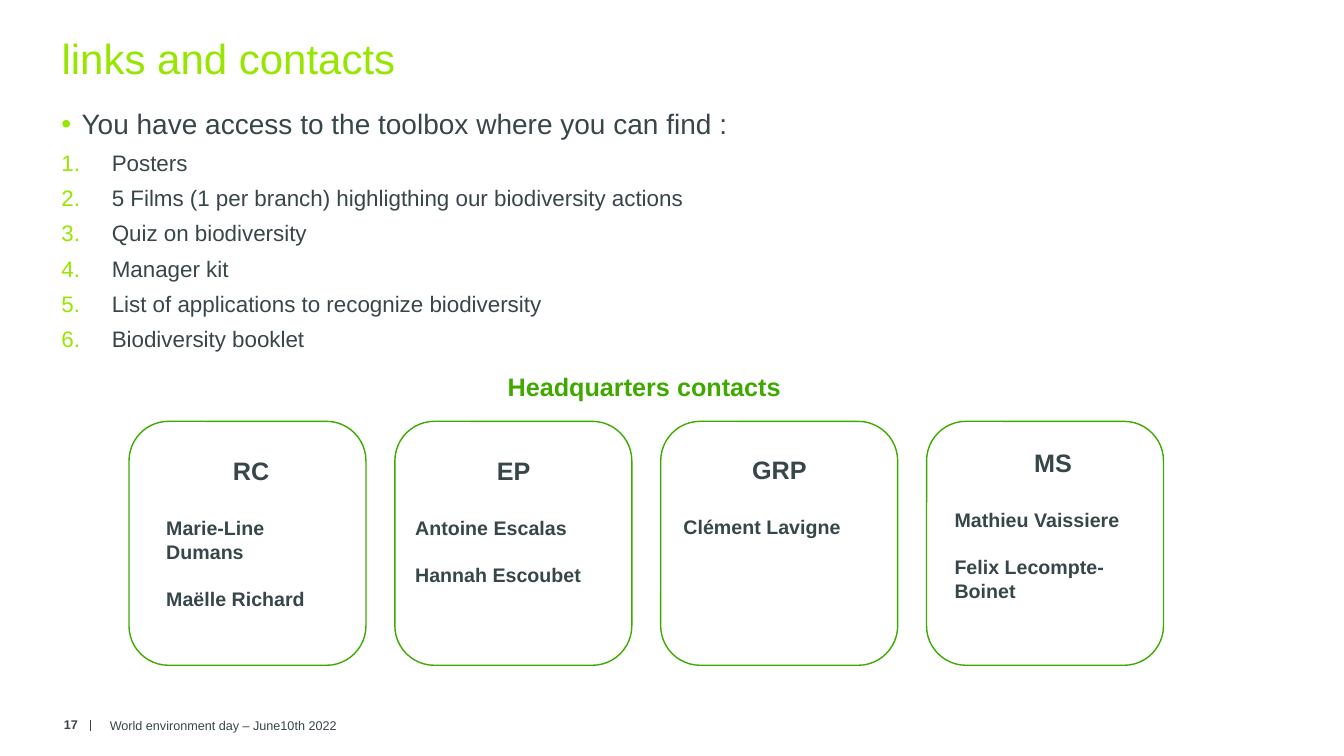
from dataclasses import dataclass

from lxml import etree
from pptx import Presentation
from pptx.dml.color import RGBColor
from pptx.enum.shapes import MSO_CONNECTOR, MSO_SHAPE
from pptx.enum.text import MSO_ANCHOR, MSO_AUTO_SIZE, PP_ALIGN
from pptx.oxml.ns import qn
from pptx.util import Emu, Inches, Pt

LEFT, CENTER, RIGHT = PP_ALIGN.LEFT, PP_ALIGN.CENTER, PP_ALIGN.RIGHT
TOP, MIDDLE = MSO_ANCHOR.TOP, MSO_ANCHOR.MIDDLE
ROUNDED = MSO_SHAPE.ROUNDED_RECTANGLE
STRAIGHT = MSO_CONNECTOR.STRAIGHT
NO_FIT = MSO_AUTO_SIZE.NONE
TITLE_ONLY = 5
SLIDE_W, SLIDE_H = Inches(13.33), Inches(7.5)


@dataclass(frozen=True)
class Theme:
    font: str = "Arial"
    lime: str = "96E600"
    green: str = "40A900"
    slate: str = "374649"
    title: float = 30
    lead: float = 20
    item: float = 16
    heading: float = 18
    name: float = 14
    footer: float = 9
    line: float = 1
    item_gap: float = 6
    heading_gap: float = 21.6
    name_gap: float = 16.8


@dataclass(frozen=True)
class Box:
    """A place on a grid of 100 columns by 100 rows."""
    x: float
    y: float
    w: float
    h: float

    def emu(self) -> tuple[Emu, Emu, Emu, Emu]:
        return col(self.x), row(self.y), col(self.w), row(self.h)


@dataclass(frozen=True)
class Card:
    branch: str
    names: tuple[str, ...]
    inset: float  # columns from the card's left edge to its text
    top: float
    width: float
    height: float


THEME = Theme()
TITLE = Box(3.83, 3.6, 79.73, 10.13)
TOOLBOX = Box(3.83, 13.47, 92.4, 42.13)
CONTACTS = Box(34.13, 48.4, 27.6, 5.33)
NUMBER = Box(1.8, 94, 4.73, 3.73)
FOOTER = Box(7.43, 94.13, 29.55, 3.73)
FIRST_CARD = Box(9.6, 55.73, 17.63, 32.27)
CARD_STEP = 19.78

ITEMS = (
    "Posters",
    "5 Films (1 per branch) highligthing our biodiversity actions",
    "Quiz on biodiversity",
    "Manager kit",
    "List of applications to recognize biodiversity",
    "Biodiversity booklet",
)
CARDS = (
    Card("RC", ("Marie-Line Dumans", "Maëlle Richard"), 2.03, 59.6, 14.1, 22),
    Card("EP", ("Antoine Escalas", "Hannah Escoubet"), 0.77, 59.6, 16.13, 18.8),
    Card("GRP", ("Clément Lavigne",), 0.95, 59.47, 15.75, 12.53),
    Card("MS", ("Mathieu Vaissiere", "Felix Lecompte-Boinet"), 1.34, 58.53, 16.13, 22),
)


def col(n: float) -> Emu:
    return Emu(round(SLIDE_W * n / 100))


def row(n: float) -> Emu:
    return Emu(round(SLIDE_H * n / 100))


def rgb(color: str) -> RGBColor:
    return RGBColor.from_string(color)


def prepare(tf, anchor=TOP):
    tf.word_wrap = True
    tf.auto_size = NO_FIT
    tf.vertical_anchor = anchor
    return tf


def text_box(slide, box: Box, anchor=TOP):
    return prepare(slide.shapes.add_textbox(*box.emu()).text_frame, anchor)


def write(tf, text: str, size: float, color: str = THEME.slate,
          bold: bool = False, align=LEFT, gap: float = 0):
    """Fill the empty first paragraph, or add one after a gap."""
    p = tf.paragraphs[0]
    if p.runs:
        p = tf.add_paragraph()
        p.space_before = Pt(gap)
    p.alignment = align
    r = p.add_run()
    r.text = text
    r.font.name = THEME.font
    r.font.size = Pt(size)
    r.font.bold = bold
    r.font.color.rgb = rgb(color)
    return p


def add_bullet(p, tag: str, indent: float, **attrs: str) -> None:
    pPr = p._p.get_or_add_pPr()
    pPr.set("marL", str(Inches(indent)))
    pPr.set("indent", str(-Inches(indent)))
    clr = etree.SubElement(pPr, qn("a:buClr"))
    etree.SubElement(clr, qn("a:srgbClr"), val=THEME.lime)
    etree.SubElement(pPr, qn("a:buFont"), typeface=THEME.font)
    etree.SubElement(pPr, qn(tag), **attrs)


def add_card(slide, card: Card, index: int) -> None:
    x = FIRST_CARD.x + index * CARD_STEP
    frame = Box(x, FIRST_CARD.y, FIRST_CARD.w, FIRST_CARD.h)
    sp = slide.shapes.add_shape(ROUNDED, *frame.emu())
    sp.shadow.inherit = False
    sp.fill.background()
    sp.line.color.rgb = rgb(THEME.green)
    sp.line.width = Pt(THEME.line)
    tf = text_box(slide, Box(x + card.inset, card.top, card.width, card.height))
    write(tf, card.branch, THEME.heading, bold=True, align=CENTER)
    for i, name in enumerate(card.names):
        gap = THEME.name_gap if i else THEME.heading_gap
        write(tf, name, THEME.name, bold=True, gap=gap)


def main() -> None:
    prs = Presentation()
    prs.slide_width, prs.slide_height = SLIDE_W, SLIDE_H
    slide = prs.slides.add_slide(prs.slide_layouts[TITLE_ONLY])

    # Title
    sp = slide.shapes.title
    sp.left, sp.top, sp.width, sp.height = TITLE.emu()
    write(prepare(sp.text_frame), "links and contacts", THEME.title, THEME.lime)

    # Toolbox list
    tf = text_box(slide, TOOLBOX)
    p = write(tf, "You have access to the toolbox where you can find :", THEME.lead)
    add_bullet(p, "a:buChar", 0.2, char="•")
    for item in ITEMS:
        p = write(tf, item, THEME.item, gap=THEME.item_gap)
        add_bullet(p, "a:buAutoNum", 0.5, type="arabicPeriod")

    # Contact cards
    for i, card in enumerate(CARDS):
        add_card(slide, card, i)
    write(text_box(slide, CONTACTS), "Headquarters contacts", THEME.heading,
          THEME.green, bold=True, align=CENTER)

    # Footer
    write(text_box(slide, NUMBER, MIDDLE), "17", THEME.footer, bold=True, align=RIGHT)
    write(text_box(slide, FOOTER, MIDDLE), "World environment day – June10th 2022",
          THEME.footer)
    rule = slide.shapes.add_connector(STRAIGHT, col(6.75), row(95.2), col(6.75), row(96.67))
    rule.line.color.rgb = rgb(THEME.slate)
    rule.line.width = Pt(THEME.line)
    etree.SubElement(rule._element.spPr, qn("a:effectLst"))

    prs.save("out.pptx")


if __name__ == "__main__":
    main()
